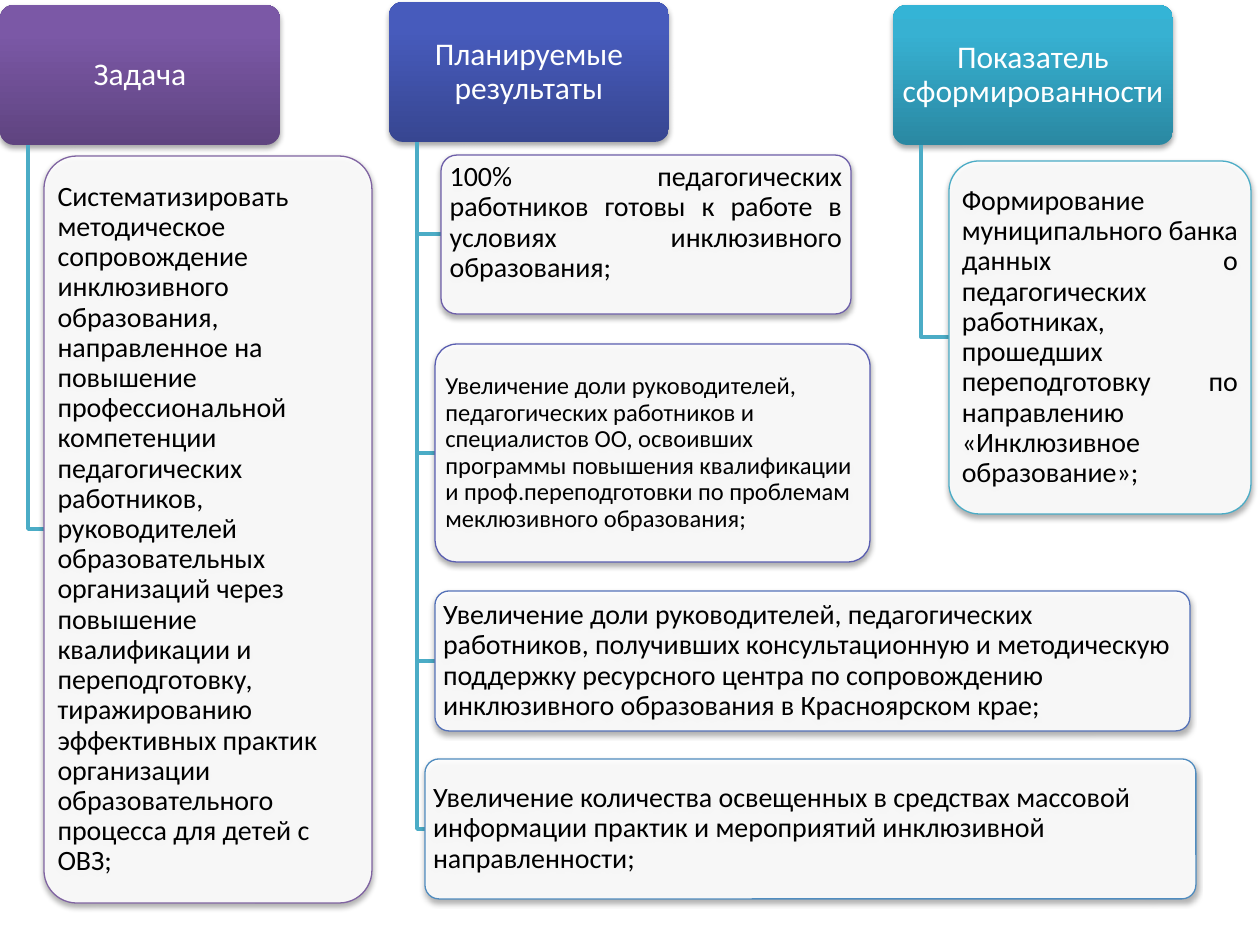
from pptx import Presentation
from pptx.dml.color import RGBColor
from pptx.enum.shapes import MSO_SHAPE
from pptx.enum.text import MSO_ANCHOR, PP_ALIGN
from pptx.oxml import parse_xml
from pptx.oxml.ns import nsdecls, qn
from pptx.util import Pt

EMU_PER_PX = 914400 / 126
HEADER_WIDTH, HEADER_HEIGHT = 280, 140
SPINE_INDENT = 28

COLUMNS = [
    {
        "title": "Задача",
        "position": (0, 5),
        "gradient": ("5F4480", "7B58A6", "7C57A8"),
        "cards": [
            {"box": (44, 156, 328, 747), "line": "8064A2",
             "text": "Систематизировать методическое сопровождение инклюзивного "
                     "образования, направленное на повышение профессиональной "
                     "компетенции педагогических работников, руководителей "
                     "образовательных организаций через повышение квалификации и "
                     "переподготовку, тиражированию эффективных практик организации "
                     "образовательного процесса для детей с ОВЗ;"},
        ],
    },
    {
        "title": "Планируемые результаты",
        "position": (389, 2),
        "gradient": ("374691", "475BBC", "455ABF"),
        "cards": [
            {"box": (441, 155, 410, 159), "line": "6E5FA9",
             "align": PP_ALIGN.JUSTIFY, "anchor": MSO_ANCHOR.TOP,
             "text": "100% педагогических работников готовы к работе в условиях "
                     "инклюзивного образования;"},
            {"box": (435, 344, 435, 218), "line": "5A5EB1", "size": 14,
             "text": "Увеличение доли руководителей, педагогических работников и "
                     "специалистов ОО, освоивших программы повышения квалификации "
                     "и проф.переподготовки по проблемам меклюзивного образования;"},
            {"box": (435, 591, 755, 140), "line": "5572B8",
             "text": "Увеличение доли руководителей, педагогических работников, "
                     "получивших консультационную и методическую поддержку "
                     "ресурсного центра по сопровождению инклюзивного образования "
                     "в Красноярском крае;"},
            {"box": (425, 759, 771, 140), "line": "508CBF",
             "text": "Увеличение количества освещенных в средствах массовой "
                     "информации практик и мероприятий инклюзивной направленности;"},
        ],
    },
    {
        "title": "Показатель сформированности",
        "position": (893, 5),
        "gradient": ("2A88A2", "37B1D2", "34B4D6"),
        "cards": [
            {"box": (949, 161, 302, 353), "line": "4BACC6",
             "align": PP_ALIGN.JUSTIFY,
             "text": "Формирование муниципального банка данных о педагогических "
                     "работниках, прошедших переподготовку по направлению "
                     "«Инклюзивное образование»;"},
        ],
    },
]


def px(length):
    return round(length * EMU_PER_PX)


def color(hex_value):
    return RGBColor.from_string(hex_value)


def set_attributes(target, values):
    for name, value in values.items():
        setattr(target, name, value)


class HierarchyBuilder:
    """Draws headers, cards and their branches on the current slide."""

    font_name = "Calibri"
    branch_color = "4BACC6"

    def __init__(self, slide):
        self.slide = slide

    def rounded_box(self, box):
        """Add a rounded rectangle with a soft shadow below it."""
        shape = self.slide.shapes.add_shape(
            MSO_SHAPE.ROUNDED_RECTANGLE, *map(px, box))
        shape.adjustments[0] = 0.1
        shape.shadow.inherit = False
        effects = shape._element.spPr.find(qn("a:effectLst"))
        effects.append(parse_xml(
            f'<a:outerShdw {nsdecls("a")} blurRad="40000" dist="23000" '
            'dir="5400000" rotWithShape="0"><a:srgbClr val="000000">'
            '<a:alpha val="35000"/></a:srgbClr></a:outerShdw>'))
        return shape

    def label(self, shape, text, size, text_color, align, anchor):
        frame = shape.text_frame
        set_attributes(frame, {
            "word_wrap": True, "vertical_anchor": anchor,
            "margin_left": px(4), "margin_right": px(4),
            "margin_top": px(3), "margin_bottom": px(3)})
        paragraph = frame.paragraphs[0]
        set_attributes(paragraph, {"alignment": align, "line_spacing": 0.9})
        paragraph._p.get_or_add_pPr().append(parse_xml(
            f'<a:spcAft {nsdecls("a")}><a:spcPct val="35000"/></a:spcAft>'))
        run = paragraph.add_run()
        run.text = text
        set_attributes(run.font, {"name": self.font_name, "size": Pt(size)})
        run.font.color.rgb = color(text_color)

    def header(self, title, position, gradient):
        shape = self.rounded_box((*position, HEADER_WIDTH, HEADER_HEIGHT))
        shape.line.fill.background()
        stops = "".join(
            f'<a:gs pos="{place}"><a:srgbClr val="{value}"/></a:gs>'
            for place, value in zip((0, 80000, 100000), gradient))
        shape._element.spPr.find(qn("a:prstGeom")).addnext(parse_xml(
            f'<a:gradFill {nsdecls("a")} rotWithShape="1"><a:gsLst>{stops}'
            '</a:gsLst><a:lin ang="16200000" scaled="0"/></a:gradFill>'))
        self.label(shape, title, 18, "FFFFFF", PP_ALIGN.CENTER, MSO_ANCHOR.MIDDLE)

    def branch(self, header_position, box):
        """Join the header's bottom to the middle of a card's left side."""
        left, top, _, height = box
        spine_x = header_position[0] + SPINE_INDENT
        middle = top + height // 2
        builder = self.slide.shapes.build_freeform(
            spine_x, header_position[1] + HEADER_HEIGHT, EMU_PER_PX)
        builder.add_line_segments([(spine_x, middle), (left, middle)], close=False)
        shape = builder.convert_to_shape()
        shape.fill.background()
        shape.line.color.rgb = color(self.branch_color)
        shape.line.width = Pt(2)
        shape.shadow.inherit = False

    def card(self, box, line, text, size=16, align=PP_ALIGN.LEFT,
             anchor=MSO_ANCHOR.MIDDLE):
        shape = self.rounded_box(box)
        shape.fill.solid()
        shape.fill.fore_color.rgb = color("FFFFFF")
        fill_color = shape._element.spPr.find(qn("a:solidFill"))[0]
        fill_color.append(parse_xml(f'<a:alpha {nsdecls("a")} val="90000"/>'))
        shape.line.color.rgb = color(line)
        shape.line.width = Pt(0.75)
        self.label(shape, text, size, "000000", align, anchor)


def main():
    presentation = Presentation()
    set_attributes(presentation, {"slide_width": px(1260), "slide_height": px(945)})
    slide = presentation.slides.add_slide(presentation.slide_layouts[6])
    builder = HierarchyBuilder(slide)
    for column in COLUMNS:
        builder.header(column["title"], column["position"], column["gradient"])
        for card in column["cards"]:
            builder.branch(column["position"], card["box"])
            builder.card(**card)
    presentation.save("out.pptx")


if __name__ == "__main__":
    main()
